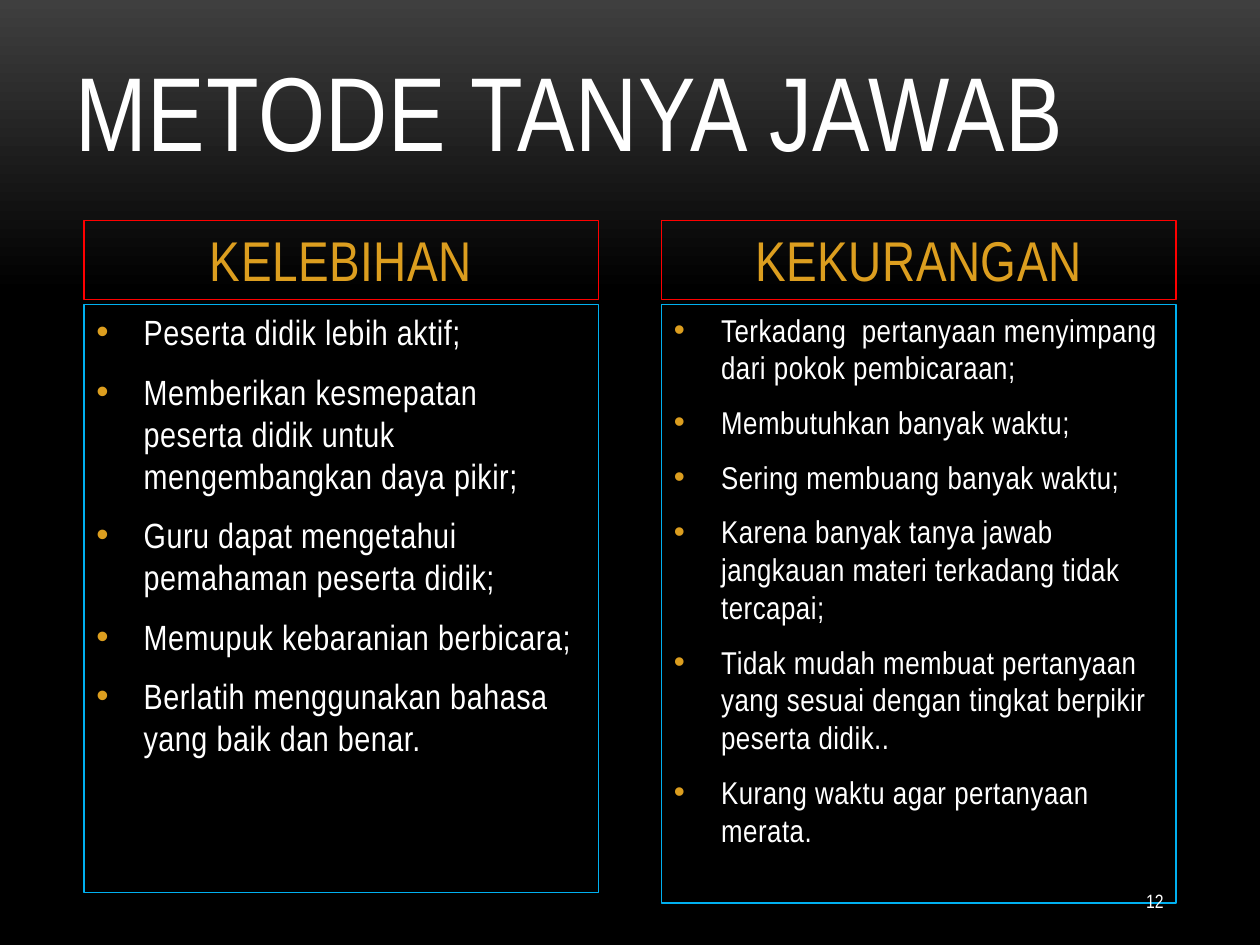
from copy import deepcopy
from dataclasses import dataclass

from lxml.etree import SubElement
from pptx import Presentation
from pptx.dml.color import RGBColor
from pptx.enum.shapes import MSO_SHAPE
from pptx.enum.text import MSO_ANCHOR, PP_ALIGN
from pptx.oxml.ns import qn
from pptx.util import Pt


@dataclass(frozen=True)
class Theme:
    font: str = "Arial Narrow"
    white: str = "FFFFFF"
    accent: str = "DC9E1F"
    heading_line: str = "FF0000"
    list_line: str = "00B0F0"
    backdrop: tuple = ((0, "3F3F3F"), (0.31, "000000"), (1, "000000"))
    title_size: int = 60
    heading_size: int = 32
    number_size: int = 11
    bullet_indent: int = 27


THEME = Theme()

ADVANTAGES = [
    "Peserta didik lebih aktif;",
    "Memberikan kesmepatan peserta didik untuk mengembangkan daya pikir;",
    "Guru dapat mengetahui pemahaman peserta didik;",
    "Memupuk kebaranian berbicara;",
    "Berlatih menggunakan bahasa yang baik dan benar.",
]
DRAWBACKS = [
    "Terkadang  pertanyaan menyimpang dari pokok pembicaraan;",
    "Membutuhkan banyak waktu;",
    "Sering membuang banyak waktu;",
    "Karena banyak tanya jawab jangkauan materi terkadang tidak tercapai;",
    "Tidak mudah membuat pertanyaan yang sesuai dengan tingkat berpikir peserta didik..",
    "Kurang waktu agar pertanyaan merata.",
]


def set_attributes(target, values):
    for name, value in values.items():
        setattr(target, name, value)


def add_paragraphs(frame, lines, size, color, spacing=0, **formats):
    """Write one paragraph per line, and return the paragraphs."""
    for index, line in enumerate(lines):
        para = frame.add_paragraph() if index else frame.paragraphs[0]
        set_attributes(para, formats)
        span = para.add_run()
        span.text = line
        set_attributes(span.font, {"name": THEME.font, "size": Pt(size)})
        span.font.color.rgb = RGBColor.from_string(color)
        span.font._element.set("spc", str(round(spacing * 100)))
    return frame.paragraphs


def add_bullet(para):
    properties = para._p.get_or_add_pPr()
    indent = Pt(THEME.bullet_indent)
    properties.set("marL", str(indent))
    properties.set("indent", str(-indent))
    color = SubElement(properties, qn("a:buClr"))
    SubElement(color, qn("a:srgbClr")).set("val", THEME.accent)
    SubElement(properties, qn("a:buFont")).set("typeface", "Arial")
    SubElement(properties, qn("a:buChar")).set("char", "•")


def add_text_box(page, box, anchor):
    frame = page.shapes.add_textbox(*map(Pt, box)).text_frame
    set_attributes(frame, {"word_wrap": True, "vertical_anchor": anchor})
    return frame


def add_outlined_box(page, box, line_color, anchor):
    panel = page.shapes.add_shape(MSO_SHAPE.RECTANGLE, *map(Pt, box))
    panel.shadow.inherit = False
    panel.fill.background()
    panel.line.color.rgb = RGBColor.from_string(line_color)
    panel.line.width = Pt(0.75)
    frame = panel.text_frame
    set_attributes(frame, {"word_wrap": True, "vertical_anchor": anchor})
    return frame


def paint_background(page):
    fill = page.background.fill
    fill.gradient()
    fill.gradient_angle = 270
    stops = fill.gradient_stops
    last_stop = stops[-1]._gs
    last_stop.addnext(deepcopy(last_stop))
    for stop, (position, color) in zip(fill.gradient_stops, THEME.backdrop):
        stop.position = position
        stop.color.rgb = RGBColor.from_string(color)


def add_title(page, box, text):
    frame = add_text_box(page, box, MSO_ANCHOR.BOTTOM)
    add_paragraphs(frame, [text], THEME.title_size, THEME.white, 0.5)


def add_column(page, box, heading, items, size):
    """Place a heading box with a bulleted list box below it."""
    left, top, width, height = box
    heading_height, gap = 45, 3
    list_top = heading_height + gap

    # Heading
    frame = add_outlined_box(page, (left, top, width, heading_height),
                             THEME.heading_line, MSO_ANCHOR.BOTTOM)
    add_paragraphs(frame, [heading], THEME.heading_size, THEME.accent, 0.3,
                   alignment=PP_ALIGN.CENTER, space_after=Pt(6),
                   space_before=Pt(THEME.heading_size * 0.2))

    # Bulleted list
    frame = add_outlined_box(page, (left, top + list_top, width, height - list_top),
                             THEME.list_line, MSO_ANCHOR.TOP)
    for para in add_paragraphs(frame, items, size, THEME.white, 0.3,
                               alignment=PP_ALIGN.LEFT, space_after=Pt(6),
                               space_before=Pt(size * 0.2)):
        add_bullet(para)


def add_page_number(page, box, number):
    frame = add_text_box(page, box, MSO_ANCHOR.MIDDLE)
    add_paragraphs(frame, [number], THEME.number_size, THEME.white,
                   alignment=PP_ALIGN.RIGHT)


def main():
    deck = Presentation()
    set_attributes(deck, {"slide_width": Pt(720), "slide_height": Pt(540)})
    page = deck.slides.add_slide(deck.slide_layouts[6])

    paint_background(page)
    add_title(page, (36, 12, 648, 90), "METODE TANYA JAWAB")
    add_column(page, (48, 126, 294, 384), "KELEBIHAN", ADVANTAGES, 20)
    add_column(page, (378, 126, 294, 390), "KEKURANGAN", DRAWBACKS, 18)
    add_page_number(page, (594, 500.4, 78, 28.8), "12")

    deck.save("out.pptx")


if __name__ == "__main__":
    main()
